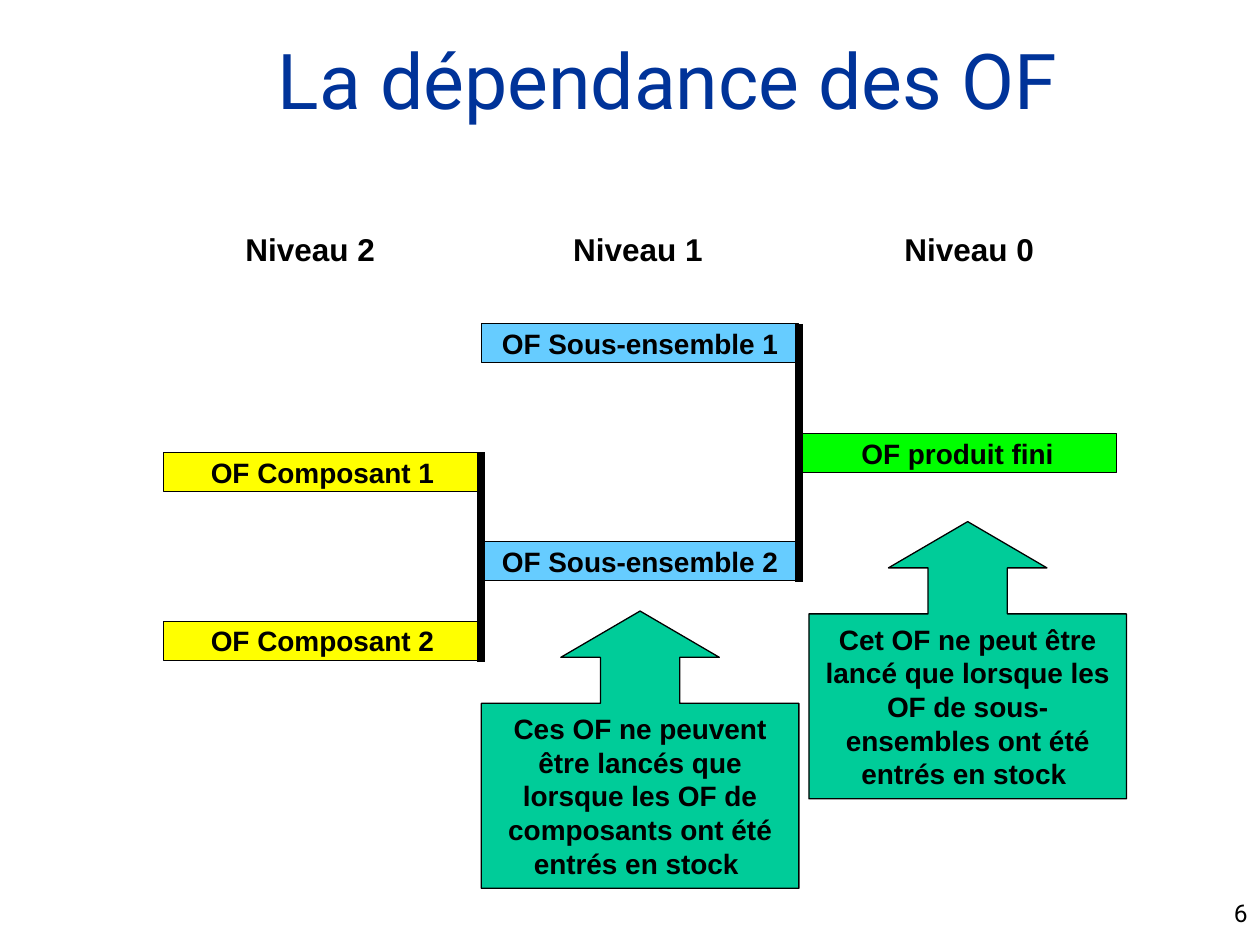
from lxml.etree import SubElement
from pptx import Presentation
from pptx.dml.color import RGBColor
from pptx.enum.shapes import MSO_CONNECTOR, MSO_SHAPE
from pptx.enum.text import MSO_ANCHOR, PP_ALIGN
from pptx.oxml.ns import qn
from pptx.util import Inches, Pt

BLACK = RGBColor(0x00, 0x00, 0x00)
NAVY = RGBColor(0x00, 0x33, 0x99)
GREEN = RGBColor(0x00, 0xFF, 0x00)
BLUE = RGBColor(0x66, 0xCC, 0xFF)
YELLOW = RGBColor(0xFF, 0xFF, 0x00)
TEAL = RGBColor(0x00, 0xCC, 0x99)

# Content
TITLE = "La dépendance des OF"
PAGE_NUMBER = "6"
LEVELS = [("Niveau 2", 1.85), ("Niveau 1", 4.45), ("Niveau 0", 7.08)]  # text, left
ORDERS = [  # text, column, top, fill
    ("OF produit fini", 2, 3.44, GREEN),
    ("OF Sous-ensemble 2", 1, 4.3, BLUE),
    ("OF Composant 2", 0, 4.93, YELLOW),
    ("OF Sous-ensemble 1", 1, 2.57, BLUE),
    ("OF Composant 1", 0, 3.59, YELLOW),
]
JOINS = [(1, 3.59, 5.25), (2, 2.57, 4.62)]  # column on the right, top, bottom
NOTES = [  # text, left, top
    ("Ces OF ne peuvent être lancés que lorsque les OF de composants "
     "ont été entrés en stock ", 3.82, 4.85),
    ("Cet OF ne peut être lancé que lorsque les OF de sous-ensembles "
     "ont été entrés en stock ", 6.42, 4.14),
]

# Grid
FIRST_LEFT, COLUMN_WIDTH = 1.3, 2.52
BAR_HEIGHT, NOTE_HEIGHT = 0.31, 2.2
ARROW_ADJUSTMENTS = (0.286, 0.286, 0.167, 0.667)


def column_left(column):
    return FIRST_LEFT + column * COLUMN_WIDTH


def write(shape, text, size, font="Arial", color=BLACK, bold=True,
          align=PP_ALIGN.LEFT, anchor=MSO_ANCHOR.TOP, wrap=True):
    frame = shape.text_frame
    frame.word_wrap = wrap
    frame.vertical_anchor = anchor
    para = frame.paragraphs[0]
    para.text = text
    para.alignment = align
    para.font.name = font
    para.font.size = Pt(size)
    para.font.bold = bold
    para.font.color.rgb = color


def add_text(page, left, top, width, height, text, size, **style):
    box = page.shapes.add_textbox(
        Inches(left), Inches(top), Inches(width), Inches(height))
    write(box, text, size, **style)


def add_block(page, kind, left, top, height, fill, text, wrap):
    block = page.shapes.add_shape(
        kind, Inches(left), Inches(top), Inches(COLUMN_WIDTH), Inches(height))
    block.shadow.inherit = False
    block.fill.solid()
    block.fill.fore_color.rgb = fill
    block.line.color.rgb = BLACK
    block.line.width = Pt(0.75)
    write(block, text, 16, align=PP_ALIGN.CENTER,
          anchor=MSO_ANCHOR.MIDDLE, wrap=wrap)
    return block


def add_join(page, left, top, bottom):
    join = page.shapes.add_connector(
        MSO_CONNECTOR.STRAIGHT,
        Inches(left), Inches(top), Inches(left), Inches(bottom))
    join.line.color.rgb = BLACK
    join.line.width = Pt(4.5)
    SubElement(join._element.spPr, qn("a:effectLst"))


def main():
    deck = Presentation()
    deck.slide_width, deck.slide_height = Inches(10), Inches(7.5)
    page = deck.slides.add_slide(deck.slide_layouts[5])

    # Title and page number
    title = page.shapes.title
    title.left, title.top = Inches(0), Inches(0)
    title.width, title.height = Inches(8.5), Inches(1.25)
    write(title, TITLE, 44, font="Roboto", color=NAVY, bold=False,
          align=PP_ALIGN.RIGHT, anchor=MSO_ANCHOR.MIDDLE)
    add_text(page, 7.92, 7.08, 2.08, 0.25, PAGE_NUMBER, 14,
             font="Roboto", bold=False, align=PP_ALIGN.RIGHT)

    # Level headings
    for text, left in LEVELS:
        add_text(page, left, 1.78, 1.23, 0.4, text, 18, wrap=False)

    # Orders and the bars that join them
    for text, column, top, fill in ORDERS:
        add_block(page, MSO_SHAPE.RECTANGLE, column_left(column), top,
                  BAR_HEIGHT, fill, text, wrap=False)
    for column, top, bottom in JOINS:
        add_join(page, column_left(column), top, bottom)

    # Arrow callouts
    for text, left, top in NOTES:
        note = add_block(page, MSO_SHAPE.UP_ARROW_CALLOUT, left, top,
                         NOTE_HEIGHT, TEAL, text, wrap=True)
        for index, value in enumerate(ARROW_ADJUSTMENTS):
            note.adjustments[index] = value

    deck.save("out.pptx")


if __name__ == "__main__":
    main()
